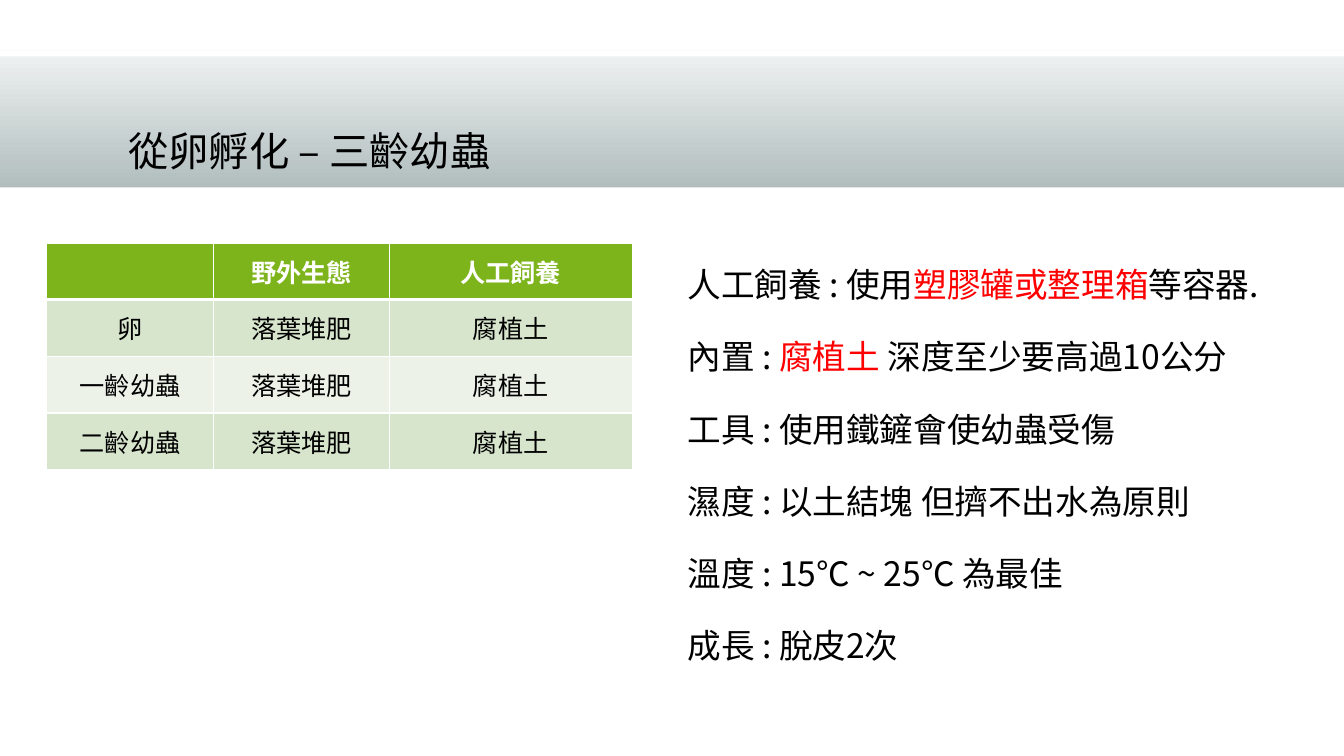
from typing import NamedTuple

from lxml.etree import SubElement
from pptx import Presentation
from pptx.dml.color import RGBColor
from pptx.enum.shapes import MSO_SHAPE
from pptx.enum.text import MSO_ANCHOR, MSO_AUTO_SIZE, PP_ALIGN
from pptx.oxml import parse_xml
from pptx.oxml.ns import nsdecls, qn
from pptx.util import Inches, Pt

FONT = "Noto Sans CJK SC"
BLACK = RGBColor(0x00, 0x00, 0x00)
WHITE = RGBColor(0xFF, 0xFF, 0xFF)
RED = RGBColor(0xFF, 0x00, 0x00)
GREEN = RGBColor(0x7D, 0xB4, 0x1B)
ROW_DARK = RGBColor(0xD7, 0xE5, 0xCD)
ROW_LIGHT = RGBColor(0xEC, 0xF2, 0xE8)
BAND_TOP = RGBColor(0xEF, 0xF2, 0xF2)
BAND_BOTTOM = RGBColor(0xB0, 0xBC, 0xBC)


class Band(NamedTuple):
    top: float
    height: float
    colors: tuple[RGBColor, ...]


class Span(NamedTuple):
    text: str
    color: RGBColor = BLACK


BANDS = [
    Band(0.5, 1.39, (BAND_TOP, BAND_BOTTOM)),
    Band(1.86, 0.06, (WHITE,)),
    Band(0.5, 0.06, (WHITE,)),
]
COLUMN_WIDTHS = [1.66, 1.74, 2.41]
ROWS = [["", "野外生態", "人工飼養"]] + [
    [stage, "落葉堆肥", "腐植土"] for stage in ("卵", "一齡幼蟲", "二齡幼蟲")
]
TABLE_HEIGHT = 2.25
CARE_NOTES = [
    [Span("人工飼養 : 使用"), Span("塑膠罐或整理箱", RED), Span("等容器.")],
    [Span("內置 : "), Span("腐植土", RED), Span(" 深度至少要高過10公分")],
    [Span("工具 : 使用鐵鏟會使幼蟲受傷")],
    [Span("濕度 : 以土結塊 但擠不出水為原則")],
    [Span("溫度 : 15℃ ~ 25℃ 為最佳")],
    [Span("成長 : 脫皮2次")],
]


def add_run(p, span: Span, size: float, bold: bool = False):
    r = p.add_run()
    r.text = span.text
    r.font.size = Pt(size)
    r.font.bold = bold
    r.font.name = FONT
    r.font.color.rgb = span.color
    SubElement(r.font._element, qn("a:ea")).set("typeface", FONT)
    return r


def add_band(s, band: Band, width: int) -> None:
    sp = s.shapes.add_shape(
        MSO_SHAPE.RECTANGLE, 0, Inches(band.top), width, Inches(band.height)
    )
    sp.shadow.inherit = False
    sp.line.fill.background()
    if len(band.colors) == 1:
        sp.fill.solid()
        sp.fill.fore_color.rgb = band.colors[0]
        return
    sp.fill.gradient()
    sp.fill.gradient_angle = 270
    for stop, color in zip(sp.fill.gradient_stops, band.colors):
        stop.color.rgb = color


def set_title(s) -> None:
    title = s.shapes.title
    title.element.getparent().append(title.element)  # in front of the bands
    title.left, title.top = Inches(1.17), Inches(0.61)
    title.width, title.height = Inches(11), Inches(1.2)
    tf = title.text_frame
    tf.auto_size = MSO_AUTO_SIZE.NONE
    tf.vertical_anchor = MSO_ANCHOR.BOTTOM
    p = tf.paragraphs[0]
    p.alignment = PP_ALIGN.LEFT
    p.line_spacing = 0.9
    r = add_run(p, Span("從卵孵化 – 三齡幼蟲"), 36)
    r.font._element.set("cap", "small")


def set_borders(cell, bottom: float) -> None:
    widths = {"lnL": 1, "lnR": 1, "lnT": 1, "lnB": bottom}
    for i, (tag, width) in enumerate(widths.items()):
        cell._tc.get_or_add_tcPr().insert(i, parse_xml(
            f'<a:{tag} {nsdecls("a")} w="{Pt(width)}"><a:solidFill>'
            f'<a:srgbClr val="{WHITE}"/></a:solidFill></a:{tag}>'
        ))


def add_stage_table(s) -> None:
    table = s.shapes.add_table(
        len(ROWS), len(COLUMN_WIDTHS), Inches(0.46), Inches(2.41),
        Inches(sum(COLUMN_WIDTHS)), Inches(TABLE_HEIGHT),
    ).table
    for column, width in zip(table.columns, COLUMN_WIDTHS):
        column.width = Inches(width)
    for i, texts in enumerate(ROWS):
        header = i == 0
        fill = GREEN if header else (ROW_DARK if i % 2 else ROW_LIGHT)
        for j, text in enumerate(texts):
            cell = table.cell(i, j)
            cell.fill.solid()
            cell.fill.fore_color.rgb = fill
            set_borders(cell, 3 if header else 1)
            cell.vertical_anchor = MSO_ANCHOR.MIDDLE
            p = cell.text_frame.paragraphs[0]
            p.alignment = PP_ALIGN.CENTER
            if text:
                add_run(p, Span(text, WHITE if header else BLACK), 18, header)


def add_care_notes(s) -> None:
    box = s.shapes.add_textbox(
        Inches(6.72), Inches(2.57), Inches(6.39), Inches(4.85)
    )
    tf = box.text_frame
    tf.word_wrap = True
    for i, spans in enumerate(CARE_NOTES):
        p = tf.add_paragraph() if i else tf.paragraphs[0]
        if i:
            p.space_before = Pt(22.75)
        for span in spans:
            add_run(p, span, 24)


def main() -> None:
    prs = Presentation()
    prs.slide_width, prs.slide_height = Inches(13.33), Inches(7.5)
    s = prs.slides.add_slide(prs.slide_layouts[5])
    for band in BANDS:
        add_band(s, band, prs.slide_width)
    set_title(s)
    add_stage_table(s)
    add_care_notes(s)
    prs.save("out.pptx")


if __name__ == "__main__":
    main()
